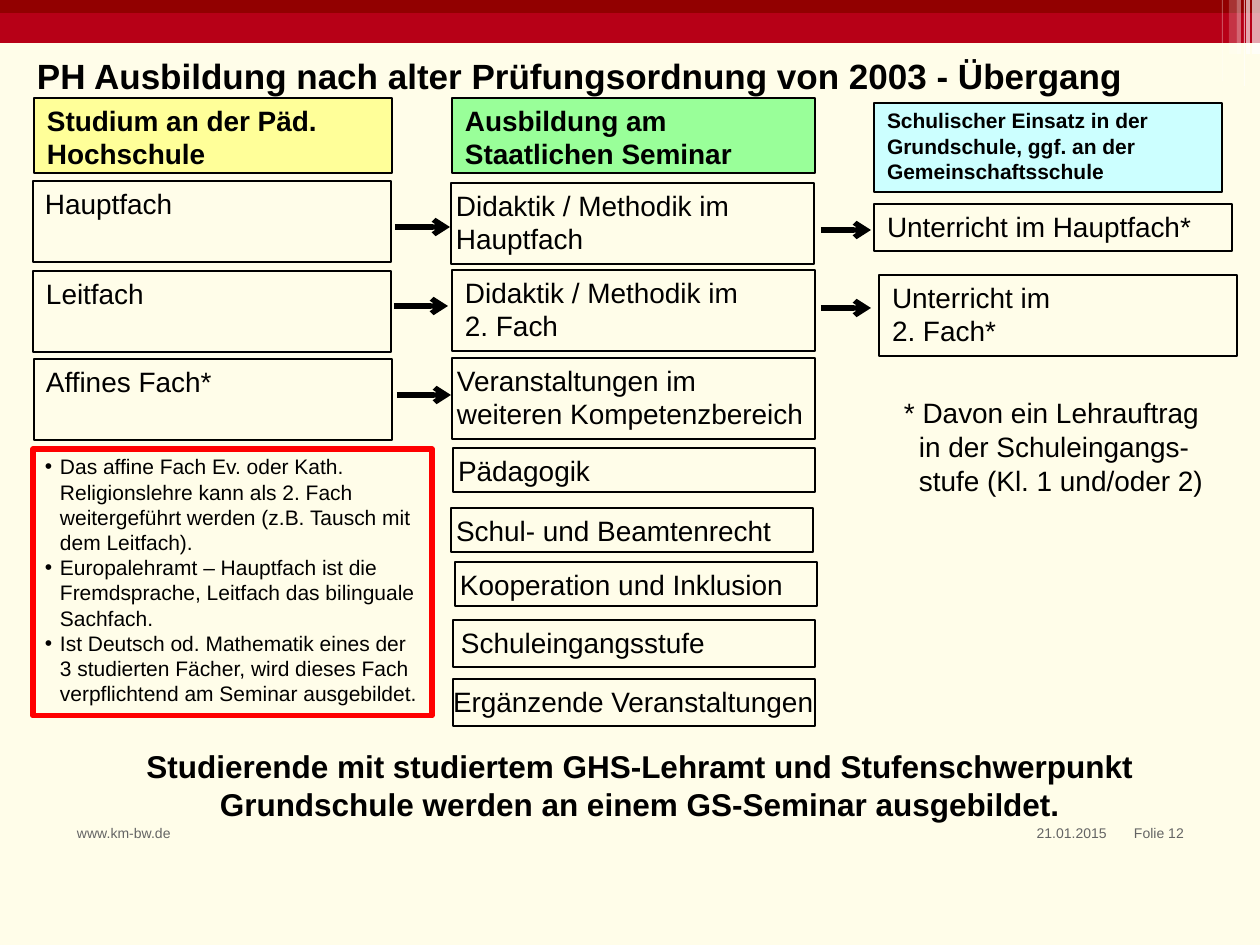
from lxml import etree
from pptx import Presentation
from pptx import util as u
from pptx.dml.color import RGBColor
from pptx.enum import shapes, text
from pptx.oxml import ns

SCALE = 914400 / 126  # EMU per px
BLACK = RGBColor(0, 0, 0)
WHITE = RGBColor(0xFF, 0xFF, 0xFF)
RED = RGBColor(0xFF, 0, 0)
GREY = RGBColor(0x64, 0x64, 0x64)
CREAM = RGBColor(0xFF, 0xFD, 0xE9)
CRIMSON = RGBColor(0xB7, 0, 0x17)
DARK_RED = RGBColor(0x92, 0, 0)
YELLOW = RGBColor(0xFF, 0xFF, 0x99)
GREEN = RGBColor(0x99, 0xFF, 0x99)
CYAN = RGBColor(0xCC, 0xFF, 0xFF)
LEFT, CENTER, RIGHT = text.PP_ALIGN.LEFT, text.PP_ALIGN.CENTER, text.PP_ALIGN.RIGHT

presentation = Presentation()
presentation.slide_width = u.Inches(10)
presentation.slide_height = u.Inches(7.5)
slide = presentation.slides.add_slide(presentation.slide_layouts[6])
slide.background.fill.solid()
slide.background.fill.fore_color.rgb = CREAM


def add_rectangle(bounds, fill=None, line=None, width=0.75):
    shape = slide.shapes.add_shape(
        shapes.MSO_SHAPE.RECTANGLE, *[round(px * SCALE) for px in bounds])
    shape.shadow.inherit = False
    if fill is None:
        shape.fill.background()
    else:
        shape.fill.solid()
        shape.fill.fore_color.rgb = fill
    if line is None:
        shape.line.fill.background()
    else:
        shape.line.color.rgb = line
        shape.line.width = u.Pt(width)
    return shape


def write(shape, paragraphs, size=16, bold=False, color=BLACK, align=LEFT,
          inset=13, indent=0, bullet=False):
    """Fill a shape with paragraphs, each with a hanging indent in px."""
    frame = shape.text_frame
    frame.word_wrap = True
    frame.vertical_anchor = text.MSO_ANCHOR.TOP
    frame.margin_left = frame.margin_right = round(inset * SCALE)
    frame.margin_top = frame.margin_bottom = u.Inches(0.04)
    for index, content in enumerate(paragraphs):
        paragraph = frame.add_paragraph() if index else frame.paragraphs[0]
        if indent:
            properties = paragraph._p.get_or_add_pPr()
            properties.set("marL", str(round(indent * SCALE)))
            properties.set("indent", str(round(-indent * SCALE)))
            if bullet:
                etree.SubElement(properties, ns.qn("a:buFont")).set("typeface", "Arial")
                etree.SubElement(properties, ns.qn("a:buChar")).set("char", "•")
        paragraph.alignment = align
        for number, line in enumerate(content.split("\n")):
            if number:
                paragraph.add_line_break()
            run = paragraph.add_run()
            run.text = line
            run.font.name = "Arial"
            run.font.size = u.Pt(size)
            run.font.bold = bold
            run.font.color.rgb = color


# Banner with translucent stripes at its right end
add_rectangle((0, 0, 1260, 43), CRIMSON)
add_rectangle((0, 0, 1260, 13), DARK_RED)
for left, width, height, opacity in [
    (1222, 1, 81, 30), (1229, 8, 54, 20), (1237, 4, 54, 40),
    (1244, 1, 86, 60), (1246, 4, 54, 65), (1252, 8, 54, 65),
]:
    stripe = add_rectangle((left, 0, width, height), WHITE)
    color_element = stripe._element.spPr.find(".//" + ns.qn("a:srgbClr"))
    etree.SubElement(color_element, ns.qn("a:alpha")).set("val", str(opacity * 1000))

# Column headings
for bounds, fill, size, heading in [
    ((34, 98, 358, 75), YELLOW, 16, "Studium an der Päd. Hochschule"),
    ((452, 98, 363, 75), GREEN, 16, "Ausbildung am Staatlichen Seminar"),
    ((874, 103, 348, 89), CYAN, 12,
     "Schulischer Einsatz in der Grundschule, ggf. an der Gemeinschaftsschule"),
]:
    write(add_rectangle(bounds, fill, BLACK), [heading], size, bold=True)

# Subject and course boxes
for bounds, inset, label in [
    ((33, 181, 358, 81), 12, "Hauptfach"),
    ((33, 271, 358, 81), 13, "Leitfach"),
    ((34, 359, 358, 81), 12, "Affines Fach*"),
    ((451, 183, 363, 81), 5, "Didaktik / Methodik im Hauptfach"),
    ((452, 270, 363, 81), 13, "Didaktik / Methodik im\n2. Fach"),
    ((452, 358, 363, 81), 5, "Veranstaltungen im\nweiteren Kompetenzbereich"),
    ((453, 448, 362, 44), 5, "Pädagogik"),
    ((451, 508, 362, 44), 5, "Schul- und Beamtenrecht"),
    ((455, 562, 362, 44), 5, "Kooperation und Inklusion"),
    ((453, 620, 362, 47), 8, "Schuleingangsstufe"),
    ((453, 679, 362, 47), 0, "Ergänzende Veranstaltungen"),
    ((874, 204, 358, 47), 13, "Unterricht im Hauptfach*"),
    ((879, 275, 358, 81), 13, "Unterricht im\n2. Fach*"),
]:
    write(add_rectangle(bounds, line=BLACK), [label], inset=inset)

# Arrows between the columns
for start, end, y in [(395, 450, 227), (394, 448, 306), (397, 451, 395),
                      (821, 871, 230), (821, 871, 308)]:
    arrow = slide.shapes.add_connector(
        shapes.MSO_CONNECTOR.STRAIGHT,
        *[round(px * SCALE) for px in (start, y, end, y)])
    arrow.line.color.rgb = BLACK
    arrow.line.width = u.Pt(3)
    etree.SubElement(arrow.line._get_or_add_ln(), ns.qn("a:tailEnd")).set("type", "arrow")
    etree.SubElement(arrow._element.spPr, ns.qn("a:effectLst"))

# Remarks framed in red
remarks = add_rectangle((33, 449, 399, 267), line=RED, width=3)
write(remarks, [
    "Das affine Fach Ev. oder Kath. Religionslehre kann als 2. Fach "
    "weitergeführt werden (z.B. Tausch mit dem Leitfach).",
    "Europalehramt – Hauptfach ist die Fremdsprache, Leitfach das bilinguale Sachfach.",
    "Ist Deutsch od. Mathematik eines der 3 studierten Fächer, wird dieses Fach "
    "verpflichtend am Seminar ausgebildet.",
], size=12, inset=12, indent=15, bullet=True)

# Title, footnote, closing statement and footer
for bounds, content, style in [
    ((24, 49, 1194, 55), "PH Ausbildung nach alter Prüfungsordnung von 2003 - Übergang",
     dict(size=20, bold=True)),
    ((891, 391, 348, 115),
     "* Davon ein Lehrauftrag\nin der Schuleingangs-\nstufe (Kl. 1 und/oder 2)",
     dict(indent=15)),
    ((60, 742, 1160, 89),
     "Studierende mit studiertem GHS-Lehramt und Stufenschwerpunkt "
     "Grundschule werden an einem GS-Seminar ausgebildet.",
     dict(size=18, bold=True, align=CENTER)),
    ((64, 820, 372, 49), "www.km-bw.de", dict(size=8, color=GREY)),
    ((980, 820, 140, 49), "21.01.2015", dict(size=8, color=GREY, align=RIGHT)),
    ((1110, 820, 87, 49), "Folie 12", dict(size=8, color=GREY, align=RIGHT)),
]:
    textbox = slide.shapes.add_textbox(*[round(px * SCALE) for px in bounds])
    write(textbox, [content], **style)

presentation.save("out.pptx")
